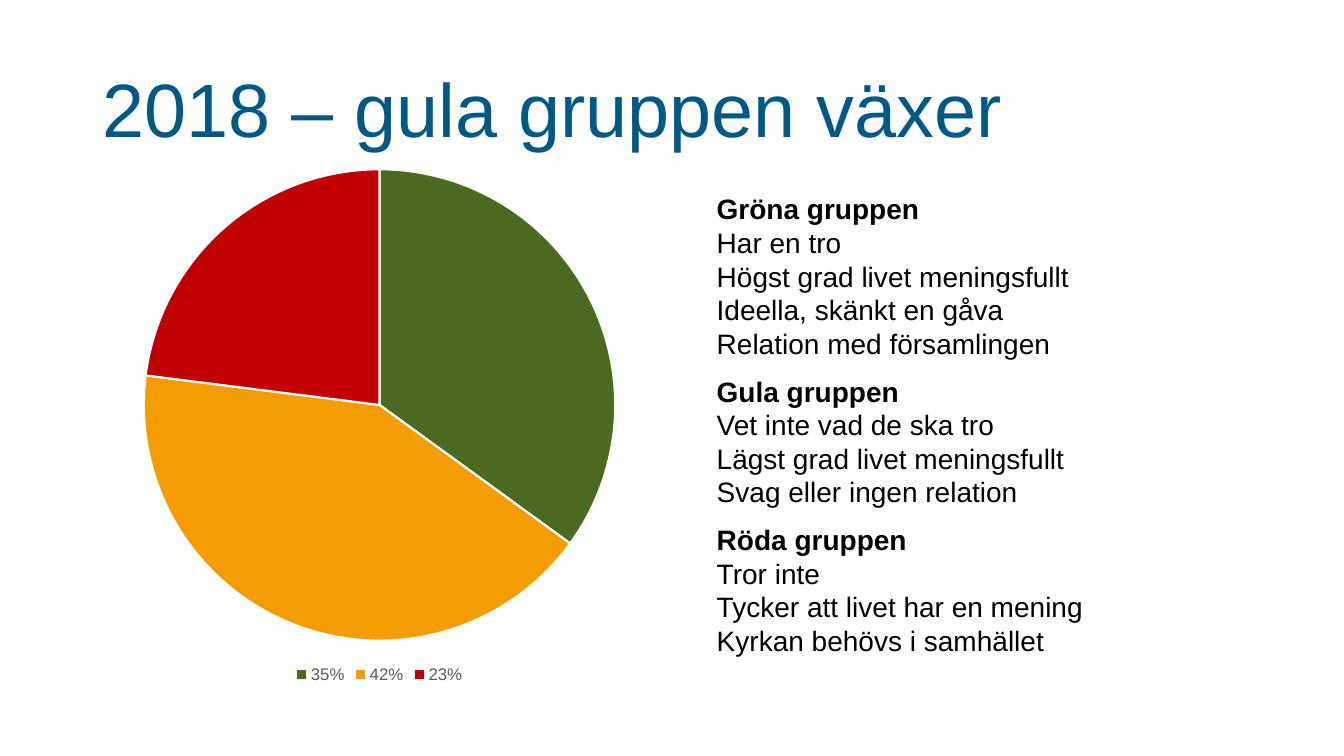
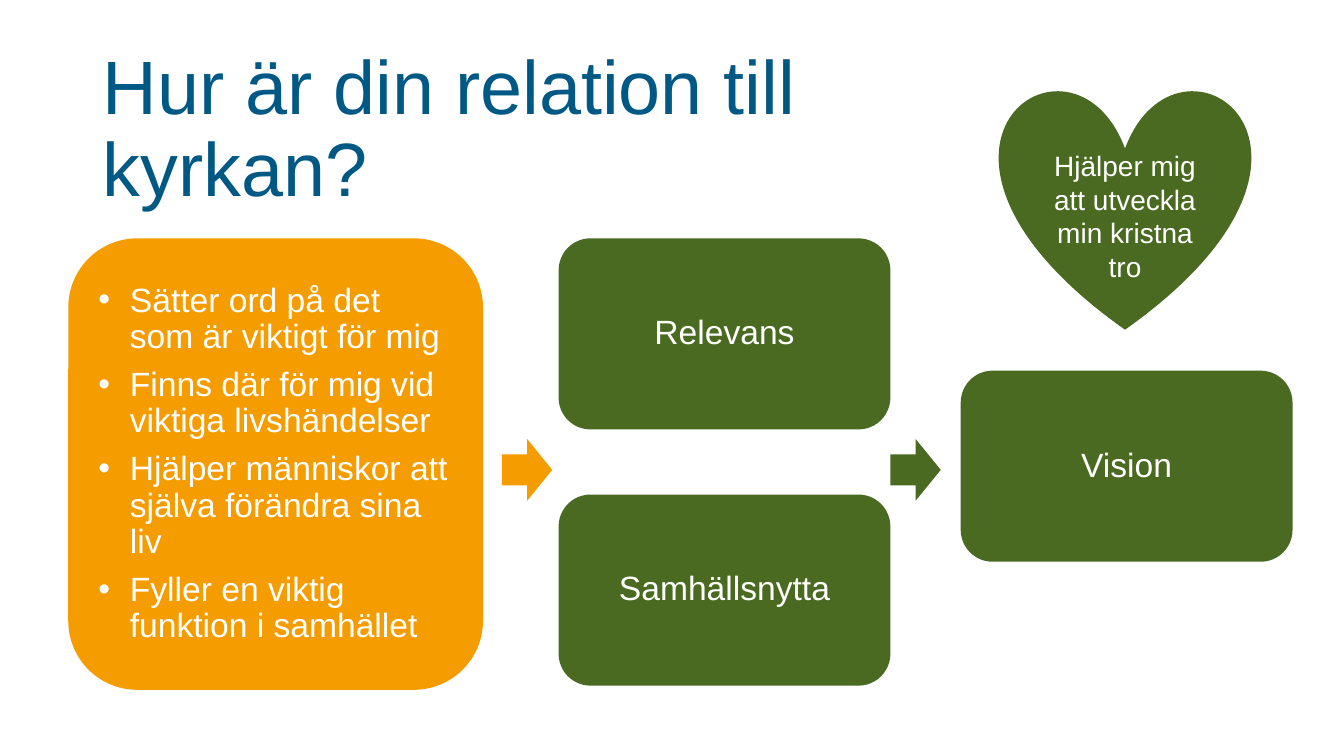
from lxml import etree
from pptx import Presentation
from pptx.chart.data import CategoryChartData
from pptx.dml.color import RGBColor
from pptx.enum.chart import XL_CHART_TYPE, XL_LEGEND_POSITION
from pptx.enum.shapes import MSO_SHAPE
from pptx.enum.text import MSO_ANCHOR, MSO_AUTO_SIZE, PP_ALIGN
from pptx.oxml.ns import qn
from pptx.util import Pt

# Shared style
EMU_PER_PX = 9525
FONT = "Arial"
BLUE = RGBColor(0x00, 0x58, 0x84)
GREEN = RGBColor(0x4A, 0x6A, 0x21)
YELLOW = RGBColor(0xF5, 0x9C, 0x00)
RED = RGBColor(0xC0, 0x00, 0x00)
BLACK = RGBColor(0x00, 0x00, 0x00)
WHITE = RGBColor(0xFF, 0xFF, 0xFF)
GREY = RGBColor(0x59, 0x59, 0x59)

# Content
SHARES = [("35%", 35, GREEN), ("42%", 42, YELLOW), ("23%", 23, RED)]
GROUPS = [
    ("Gröna gruppen", ["Har en tro", "Högst grad livet meningsfullt",
                       "Ideella, skänkt en gåva", "Relation med församlingen"]),
    ("Gula gruppen", ["Vet inte vad de ska tro", "Lägst grad livet meningsfullt",
                      "Svag eller ingen relation"]),
    ("Röda gruppen", ["Tror inte", "Tycker att livet har en mening",
                      "Kyrkan behövs i samhället"]),
]
RELATIONS = [
    "Sätter ord på det som är viktigt för mig",
    "Finns där för mig vid viktiga livshändelser",
    "Hjälper människor att själva förändra sina liv",
    "Fyller en viktig funktion i samhället",
]


def px(length):
    return length * EMU_PER_PX


def place(shape, box):
    shape.left, shape.top, shape.width, shape.height = map(px, box)


def style_font(font, size, color, bold=False):
    font.name = FONT
    font.size = Pt(size)
    font.color.rgb = color
    font.bold = bold


def add_run(paragraph, text, size, color, bold=False):
    run = paragraph.add_run()
    run.text = text
    style_font(run.font, size, color, bold)


def set_bullet(paragraph, indent=0, character=None):
    """Hang a bullet in the indent, or turn the bullet off."""
    properties = paragraph._p.get_or_add_pPr()
    properties.set("marL", str(px(indent)))
    properties.set("indent", str(-px(indent)))
    if character:
        etree.SubElement(properties, qn("a:buFont")).set("typeface", FONT)
        etree.SubElement(properties, qn("a:buChar")).set("char", character)
    else:
        etree.SubElement(properties, qn("a:buNone"))


def next_paragraph(frame, index):
    return frame.add_paragraph() if index else frame.paragraphs[0]


def set_title(slide, text, box):
    title = slide.shapes.title
    place(title, box)
    frame = title.text_frame
    frame.word_wrap = True
    frame.auto_size = MSO_AUTO_SIZE.NONE
    frame.vertical_anchor = MSO_ANCHOR.MIDDLE
    paragraph = frame.paragraphs[0]
    paragraph.alignment = PP_ALIGN.LEFT
    paragraph.line_spacing = 0.9
    add_run(paragraph, text, 54, BLUE)


def add_filled_shape(slide, preset, box, color):
    shape = slide.shapes.add_shape(preset, *map(px, box))
    shape.shadow.inherit = False
    shape.fill.solid()
    shape.fill.fore_color.rgb = color
    shape.line.fill.background()
    frame = shape.text_frame
    frame.word_wrap = True
    frame.vertical_anchor = MSO_ANCHOR.MIDDLE
    return shape


def add_label_shape(slide, preset, box, text, size, line_spacing=1.0):
    frame = add_filled_shape(slide, preset, box, GREEN).text_frame
    paragraph = frame.paragraphs[0]
    paragraph.alignment = PP_ALIGN.CENTER
    paragraph.line_spacing = line_spacing
    add_run(paragraph, text, size, WHITE)
    return frame


def add_share_pie(slide, box):
    data = CategoryChartData()
    data.categories = [label for label, _, _ in SHARES]
    data.add_series("Series 1", [value for _, value, _ in SHARES])
    chart = slide.shapes.add_chart(XL_CHART_TYPE.PIE, *map(px, box), data).chart
    chart.has_title = False
    style_font(chart.font, 10, BLACK)
    chart.has_legend = True
    chart.legend.position = XL_LEGEND_POSITION.BOTTOM
    chart.legend.include_in_layout = False
    style_font(chart.legend.font, 12, GREY)
    plot = chart.plots[0]
    plot.vary_by_categories = True
    for index, (_, _, color) in enumerate(SHARES):
        slice_format = plot.series[0].points[index].format
        slice_format.fill.solid()
        slice_format.fill.fore_color.rgb = color
        slice_format.line.color.rgb = WHITE
        slice_format.line.width = Pt(1.5)


def fill_group_list(body, box):
    place(body, box)
    frame = body.text_frame
    frame.word_wrap = True
    frame.auto_size = MSO_AUTO_SIZE.NONE
    frame.vertical_anchor = MSO_ANCHOR.TOP
    for index, (heading, lines) in enumerate(GROUPS):
        paragraph = next_paragraph(frame, index)
        set_bullet(paragraph)
        paragraph.space_before = Pt(10 if index else 0)
        add_run(paragraph, heading, 20, BLACK, bold=True)
        for line in lines:
            paragraph.add_line_break()
            add_run(paragraph, line, 20, BLACK)


def add_relation_panel(slide, box):
    frame = add_filled_shape(slide, MSO_SHAPE.ROUNDED_RECTANGLE, box, YELLOW).text_frame
    for index, text in enumerate(RELATIONS):
        paragraph = next_paragraph(frame, index)
        set_bullet(paragraph, 30, "•")
        paragraph.alignment = PP_ALIGN.LEFT
        paragraph.line_spacing = 0.9
        paragraph.space_after = Pt(8.4)
        add_run(paragraph, text, 24, WHITE)


def add_relation_flow(slide, box):
    left, top, _, height = box
    add_relation_panel(slide, (left, top, 395, height))

    # Arrows between the columns
    for offset, color in ((413, YELLOW), (783, GREEN)):
        add_filled_shape(slide, MSO_SHAPE.RIGHT_ARROW,
                         (left + offset, top + 191, 48, 59), color)

    # Green boxes
    for x, y, text in ((467, 0, "Relevans"), (467, 244, "Samhällsnytta"),
                       (850, 126, "Vision")):
        add_label_shape(slide, MSO_SHAPE.ROUNDED_RECTANGLE,
                        (left + x, top + y, 316, 182), text, 24, 0.9)


def build_groups_slide(presentation):
    slide = presentation.slides.add_slide(presentation.slide_layouts[1])
    set_title(slide, "2018 – gula gruppen växer", (88, 38, 1104, 139))
    fill_group_list(slide.placeholders[1], (673, 178, 552, 485))
    add_share_pie(slide, (50, 148, 623, 507))


def build_relation_slide(presentation):
    slide = presentation.slides.add_slide(presentation.slide_layouts[5])
    set_title(slide, "Hur är din relation till kyrkan?", (88, 38, 700, 174))
    heart = add_label_shape(slide, MSO_SHAPE.HEART, (952, 84, 239, 230),
                            "Hjälper mig att utveckla min kristna tro", 20)
    heart.margin_top = px(37)
    add_relation_flow(slide, (65, 227, 1166, 430))


def main():
    presentation = Presentation()
    presentation.slide_width = px(1280)
    presentation.slide_height = px(720)
    build_groups_slide(presentation)
    build_relation_slide(presentation)
    presentation.save("out.pptx")


if __name__ == "__main__":
    main()
